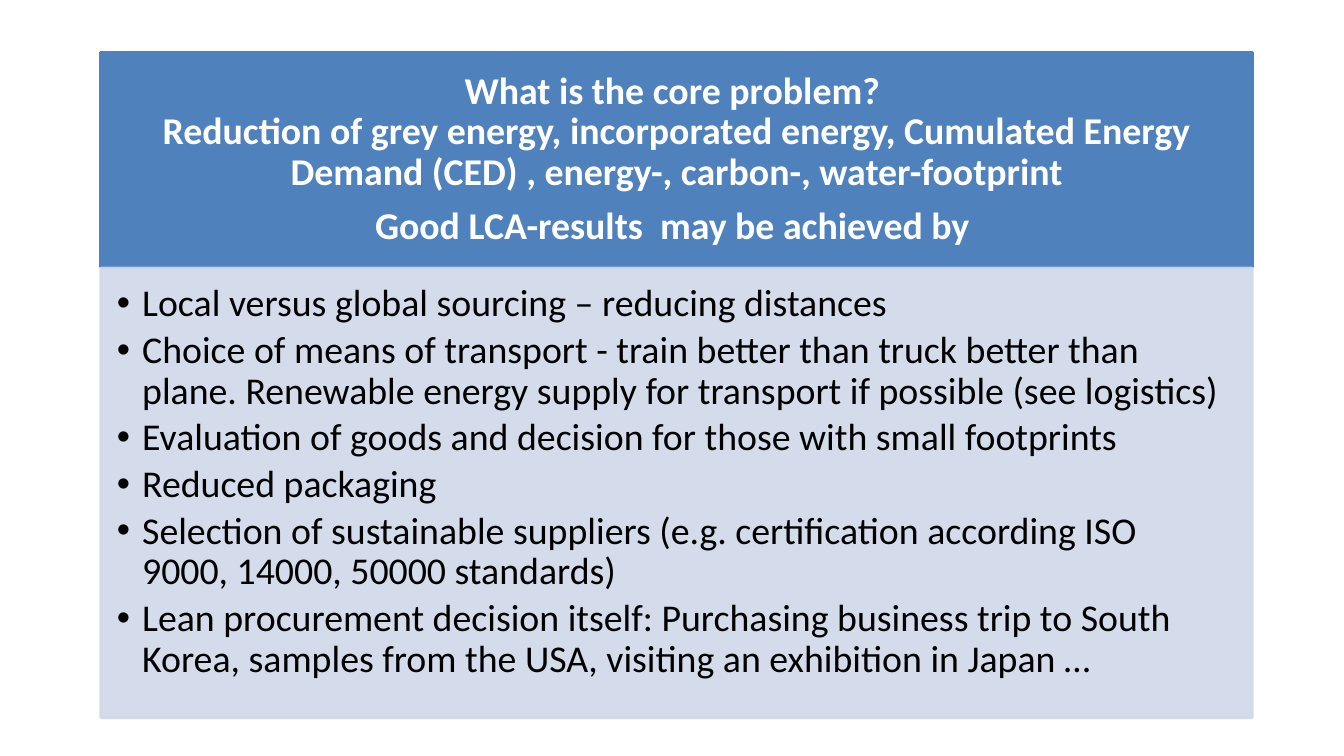
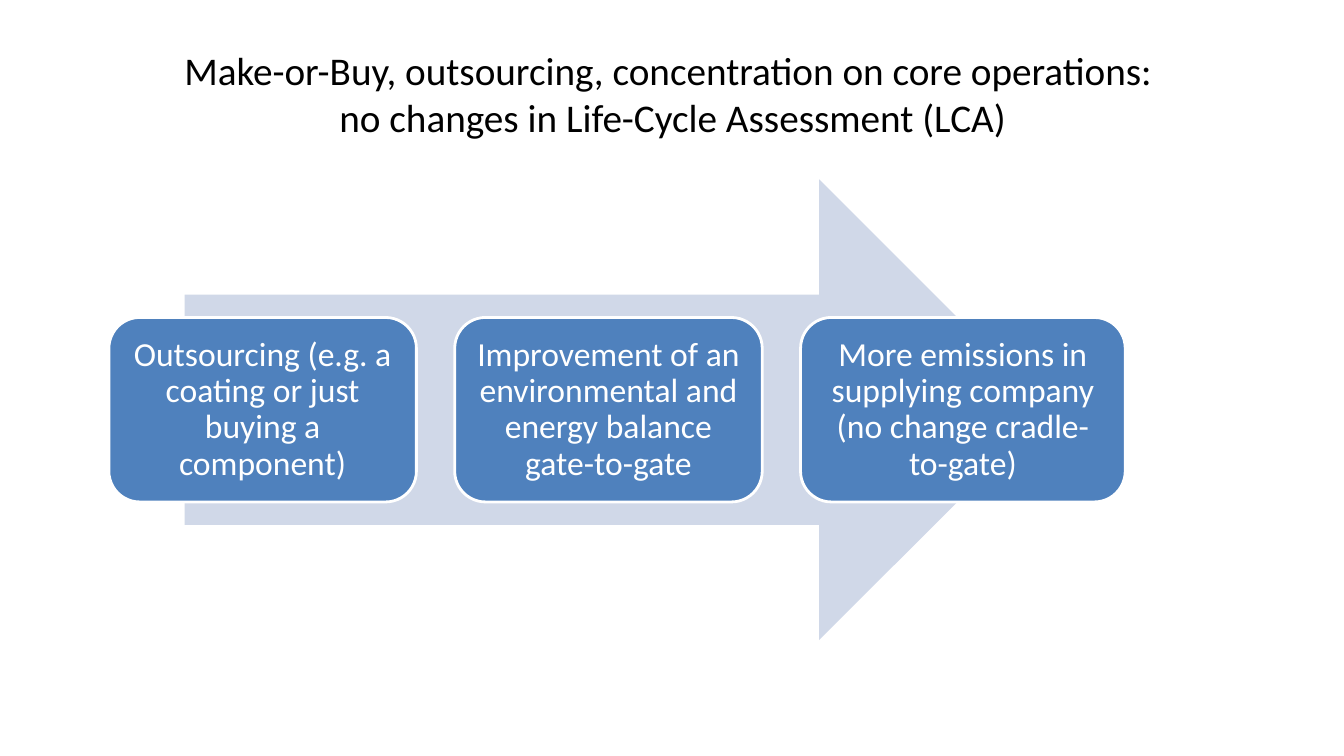
from dataclasses import dataclass

from lxml import etree
from pptx import Presentation
from pptx import util as u
from pptx.dml.color import RGBColor
from pptx.enum import shapes, text
from pptx.oxml import ns

# Shared look
FONT = "Calibri"
BLUE, PALE, WHITE, BLACK = "4F81BD", "D0D8E8", "FFFFFF", "000000"
MID, TOP = text.MSO_ANCHOR.MIDDLE, text.MSO_ANCHOR.TOP
LEFT, MAIN = text.PP_ALIGN.LEFT, text.PP_ALIGN.CENTER


@dataclass(frozen=True)
class Box:
    left: float
    top: float
    width: float
    height: float


@dataclass(frozen=True)
class Style:
    size: float
    color: str
    bold: bool = False
    align: text.PP_ALIGN = MAIN
    anchor: text.MSO_ANCHOR = MID
    lines: float = 0.9
    after: float = 0
    indent: float = 0
    insets: tuple[float, float, float, float] = (0.1, 0.1, 0.1, 0.1)


@dataclass(frozen=True)
class Card:
    text: str
    width: float


HEAD = Style(27, WHITE, bold=True, after=9.45, insets=(0.21, 0.12, 0.21, 0.12))
LIST = Style(27, BLACK, align=LEFT, anchor=TOP, after=4.05, indent=0.25,
             insets=(0.16, 0.16, 0.21, 0.24))
TITLE = Style(28, BLACK, lines=1, insets=(0.1, 0.05, 0.1, 0.05))
STEP = Style(24, WHITE)

TOPIC = [
    "What is the core problem? \nReduction of grey energy, incorporated energy, "
    "Cumulated Energy Demand (CED) , energy-, carbon-, water-footprint",
    "Good LCA-results  may be achieved by ",
]
POINTS = [
    "Local versus global sourcing – reducing distances",
    "Choice of means of transport - train better than truck better than plane. "
    "Renewable energy supply for transport if possible (see logistics)",
    "Evaluation of goods and decision for those with small footprints",
    "Reduced packaging",
    "Selection of sustainable suppliers (e.g. certification according ISO "
    "9000, 14000, 50000 standards)",
    "Lean procurement decision itself: Purchasing business trip to South Korea, "
    "samples from the USA, visiting an exhibition in Japan …",
]
CARDS = [
    Card("Outsourcing (e.g. a coating or just buying a component)", 3.05),
    Card("Improvement of an environmental and energy balance gate-to-gate", 3.05),
    Card("More emissions in supplying company (no change cradle-to-gate)", 3.22),
]


def rgb(code: str) -> RGBColor:
    return RGBColor.from_string(code)


def place(shape, box: Box) -> None:
    shape.left, shape.top = u.Inches(box.left), u.Inches(box.top)
    shape.width, shape.height = u.Inches(box.width), u.Inches(box.height)


def paint(shape, fill: str, line: str | None = None, alpha: int = 100) -> None:
    """Set fill and outline, with opacity in percent."""
    shape.fill.solid()
    shape.fill.fore_color.rgb = rgb(fill)
    if line:
        shape.line.color.rgb = rgb(line)
        shape.line.width = u.Pt(2)
    else:
        shape.line.fill.background()
    if alpha < 100:
        for tint in shape.element.spPr.iter(ns.qn("a:srgbClr")):
            etree.SubElement(tint, ns.qn("a:alpha"), val=str(alpha * 1000))


def write(shape, paras: list[str], style: Style) -> None:
    """Fill a shape with paragraphs in one style."""
    frame = shape.text_frame
    frame.word_wrap = True
    frame.auto_size = text.MSO_AUTO_SIZE.NONE
    frame.vertical_anchor = style.anchor
    (frame.margin_left, frame.margin_top,
     frame.margin_right, frame.margin_bottom) = map(u.Inches, style.insets)
    for i, words in enumerate(paras):
        para = frame.add_paragraph() if i else frame.paragraphs[0]
        para.text = words
        para.alignment = style.align
        para.line_spacing = style.lines
        para.space_before, para.space_after = u.Pt(0), u.Pt(style.after)
        if style.indent:
            props = para._p.get_or_add_pPr()
            props.set("marL", str(u.Inches(style.indent)))
            props.set("indent", str(u.Inches(-style.indent)))
        for run in para.runs:
            run.font.name = FONT
            run.font.size = u.Pt(style.size)
            run.font.bold = style.bold
            run.font.color.rgb = rgb(style.color)


def draw(slide, kind: shapes.MSO_SHAPE, box: Box, fill: str,
         line: str | None = None):
    shape = slide.shapes.add_shape(kind, 0, 0, 0, 0)
    shape.shadow.inherit = False
    place(shape, box)
    paint(shape, fill, line)
    return shape


def goals(deck) -> None:
    """Heading panel above a list panel."""
    slide = deck.slides.add_slide(deck.slide_layouts[1])
    head, body = slide.shapes.title, slide.placeholders[1]
    place(head, Box(1, 0.52, 11.42, 2.13))
    paint(head, BLUE, BLUE)
    write(head, TOPIC, HEAD)
    place(body, Box(1, 2.66, 11.42, 4.46))
    paint(body, PALE, PALE, alpha=90)
    write(body, POINTS, LIST)


def steps(deck) -> None:
    """Three cards in a row over a wide arrow."""
    slide = deck.slides.add_slide(deck.slide_layouts[5])
    title = slide.shapes.title
    place(title, Box(0.67, 0.3, 12, 1.25))
    write(title, ["Make-or-Buy, outsourcing, concentration on core operations: \n"
                  "no changes in Life-Cycle Assessment (LCA)"], TITLE)
    draw(slide, shapes.MSO_SHAPE.RIGHT_ARROW, Box(1.83, 1.78, 8.58, 4.57), PALE)
    left, gap = 1.08, 0.38
    for card in CARDS:
        shape = draw(slide, shapes.MSO_SHAPE.ROUNDED_RECTANGLE,
                     Box(left, 3.15, card.width, 1.83), BLUE, WHITE)
        write(shape, [card.text], STEP)
        left += card.width + gap


def main() -> None:
    deck = Presentation()
    deck.slide_width, deck.slide_height = u.Inches(13.33), u.Inches(7.5)
    goals(deck)
    steps(deck)
    deck.save("out.pptx")


if __name__ == "__main__":
    main()
